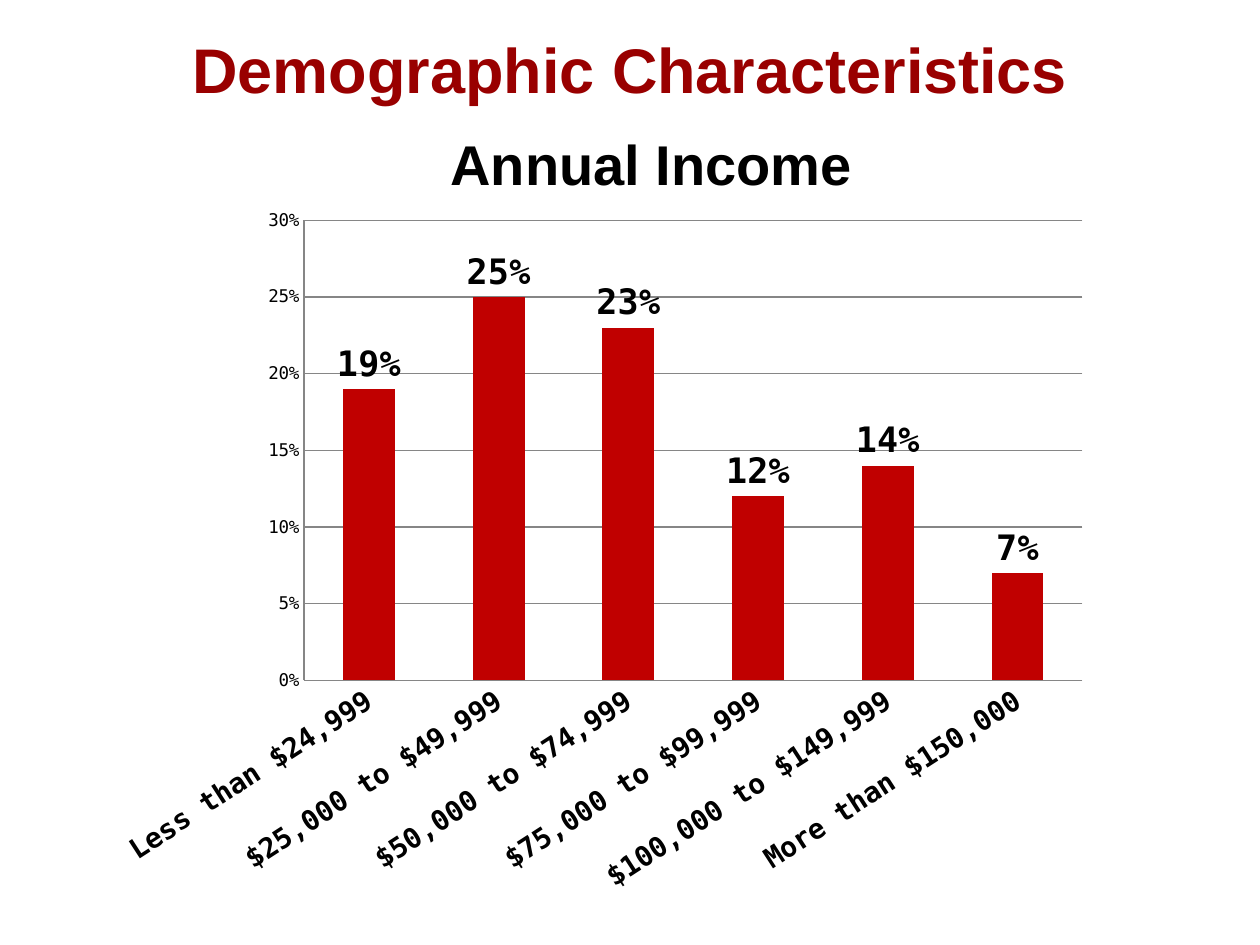
from dataclasses import dataclass

from lxml import etree
from pptx import Presentation
from pptx.chart.data import CategoryChartData
from pptx.dml.color import RGBColor
from pptx.enum.chart import XL_CHART_TYPE, XL_LABEL_POSITION, XL_TICK_MARK
from pptx.enum.text import MSO_ANCHOR, PP_ALIGN
from pptx.oxml.ns import qn
from pptx.util import Inches, Pt

COLUMN = XL_CHART_TYPE.COLUMN_CLUSTERED
OUTSIDE_END = XL_LABEL_POSITION.OUTSIDE_END
NO_TICK = XL_TICK_MARK.NONE
MIDDLE = MSO_ANCHOR.MIDDLE
CENTER = PP_ALIGN.CENTER

WIDTH, HEIGHT = Inches(10), Inches(7.5)
HEADING_FONT, CHART_FONT = "Arial", "DejaVu Sans Mono"
BLACK, TITLE_RED, BAR_RED, GRID_GRAY = "000000", "990000", "C00000", "868686"
LABEL_ANGLE = -33

INCOME = {
    "Less than $24,999": 0.19,
    "$25,000 to $49,999": 0.25,
    "$50,000 to $74,999": 0.23,
    "$75,000 to $99,999": 0.12,
    "$100,000 to $149,999": 0.14,
    "More than $150,000": 0.07,
}


@dataclass
class Box:
    """Position and size in inches."""
    left: float
    top: float
    width: float
    height: float

    def emu(self) -> tuple:
        return tuple(Inches(v) for v in (self.left, self.top, self.width, self.height))


@dataclass
class Heading:
    text: str
    box: Box
    size: int
    color: str


TITLE = Heading("Demographic Characteristics", Box(0.5, -0.08, 9, 1.25), 36, TITLE_RED)
SUBTITLE = Heading("Annual Income", Box(0.67, 0.67, 9, 1.25), 32, BLACK)
CHART_BOX = Box(0.83, 1.58, 7.92, 5.62)
PLOT_SHARES = {"x": 0.2, "y": 0.03, "w": 0.78, "h": 0.65}


def rgb(color: str) -> RGBColor:
    return RGBColor.from_string(color)


def style_font(font, name: str, size: int, color: str, bold: bool) -> None:
    font.name, font.size, font.bold = name, Pt(size), bold
    font.color.rgb = rgb(color)


def write_heading(s, heading: Heading) -> None:
    s.left, s.top, s.width, s.height = heading.box.emu()
    tf = s.text_frame
    tf.word_wrap = True
    tf.vertical_anchor = MIDDLE
    p = tf.paragraphs[0]
    p.alignment = CENTER
    r = p.add_run()
    r.text = heading.text
    style_font(r.font, HEADING_FONT, heading.size, heading.color, True)


def style_line(line) -> None:
    line.color.rgb = rgb(GRID_GRAY)
    line.width = Pt(0.75)


def set_plot_layout(chart, shares: dict) -> None:
    """Fix the inner plot area as shares of the chart's size."""
    area = chart.plots[0]._element.getparent()
    layout = area.find(qn("c:layout"))
    if layout is None:
        layout = etree.Element(qn("c:layout"))
        area.insert(0, layout)
    manual = etree.SubElement(layout, qn("c:manualLayout"))
    settings = {"layoutTarget": "inner", "xMode": "edge", "yMode": "edge", **shares}
    for tag, value in settings.items():
        etree.SubElement(manual, qn(f"c:{tag}")).set("val", str(value))


def add_income_chart(slide) -> None:
    data = CategoryChartData(number_format="0%")
    data.categories = list(INCOME)
    data.add_series("Series 1", list(INCOME.values()))
    chart = slide.shapes.add_chart(COLUMN, *CHART_BOX.emu(), data).chart
    chart.has_legend = chart.has_title = False
    style_font(chart.font, CHART_FONT, 10, BLACK, False)
    set_plot_layout(chart, PLOT_SHARES)

    # Axes
    for axis in (chart.category_axis, chart.value_axis):
        axis.major_tick_mark = axis.minor_tick_mark = NO_TICK
        style_line(axis.format.line)
    names = chart.category_axis.tick_labels
    style_font(names.font, CHART_FONT, 16, BLACK, True)
    body = chart.category_axis._element.find(qn("c:txPr")).find(qn("a:bodyPr"))
    body.set("rot", str(LABEL_ANGLE * 60000))
    values = chart.value_axis
    values.minimum_scale, values.maximum_scale, values.major_unit = 0, 0.3, 0.05
    values.tick_labels.number_format = "0%"
    values.tick_labels.number_format_is_linked = False
    style_line(values.major_gridlines.format.line)

    # Bars and their labels
    plot = chart.plots[0]
    plot.gap_width, plot.vary_by_categories = 150, False
    bars = plot.series[0]
    bars.format.fill.solid()
    bars.format.fill.fore_color.rgb = rgb(BAR_RED)
    labels = bars.data_labels
    labels.show_value = True
    labels.number_format, labels.number_format_is_linked = "0%", False
    labels.position = OUTSIDE_END
    style_font(labels.font, CHART_FONT, 20, BLACK, True)


def main() -> None:
    prs = Presentation()
    prs.slide_width, prs.slide_height = WIDTH, HEIGHT
    slide = prs.slides.add_slide(prs.slide_layouts[5])
    write_heading(slide.shapes.title, TITLE)
    add_income_chart(slide)
    write_heading(slide.shapes.add_textbox(*SUBTITLE.box.emu()), SUBTITLE)
    prs.save("out.pptx")


if __name__ == "__main__":
    main()
